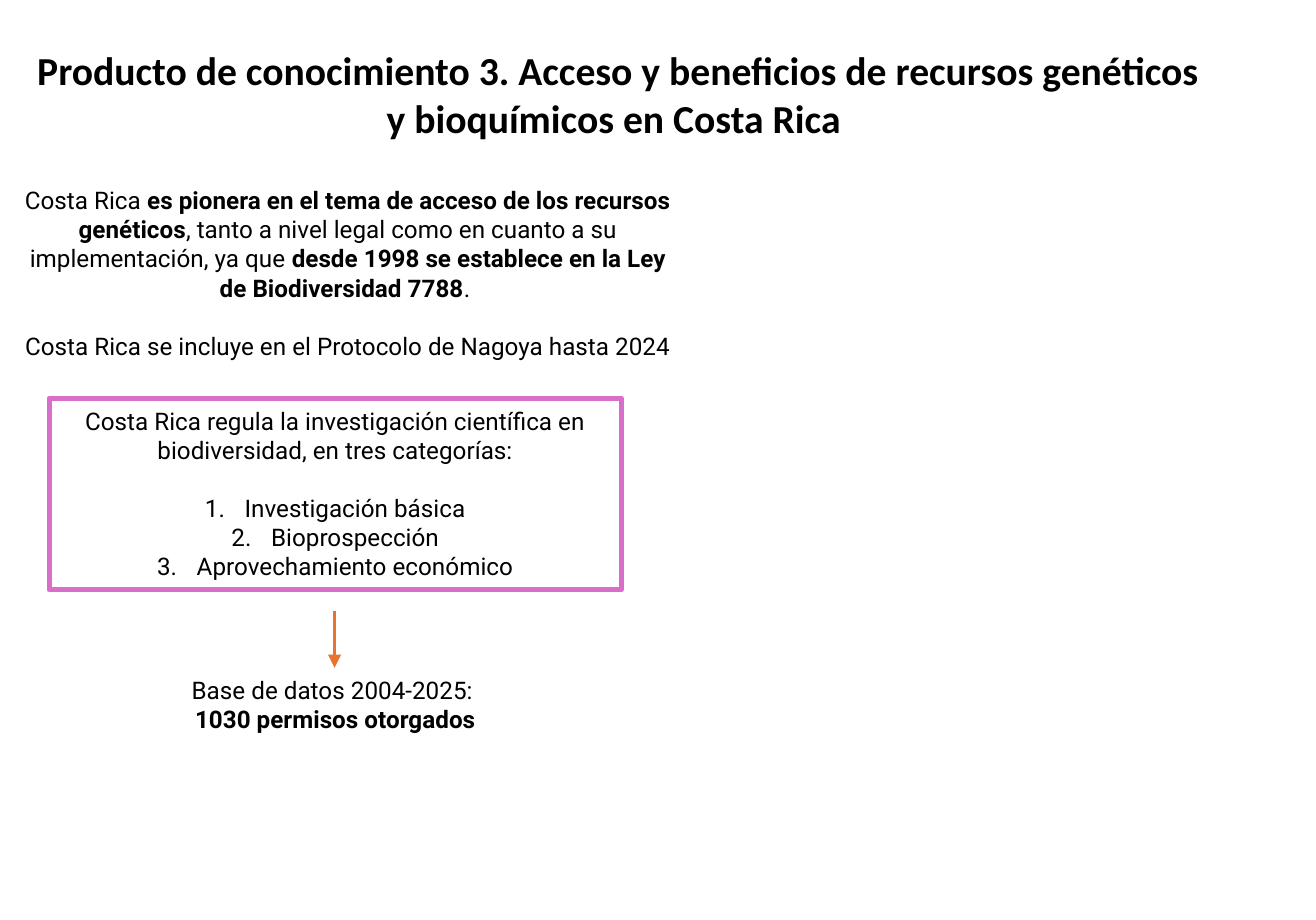
from lxml import etree
from pptx import Presentation, util as u
from pptx.dml.color import RGBColor
from pptx.enum import shapes, text
from pptx.oxml.ns import qn

COLORS = {"ink": "000000", "frame": "D86ECC", "arrow": "E97132"}


def color(name):
    return RGBColor.from_string(COLORS[name])


def write(para, parts, font="Roboto", size=11, bold=False, before=0):
    """Write text, or (text, bold) parts, into a centred paragraph."""
    para.alignment = text.PP_ALIGN.CENTER
    para.space_before = u.Pt(before)
    if isinstance(parts, str):
        parts = [(parts, bold)]
    for words, heavy in parts:
        run = para.add_run()
        run.text = words
        run.font.name = font
        run.font.size = u.Pt(size)
        run.font.bold = heavy
        run.font.color.rgb = color("ink")


class Page:
    gap = 13.2  # height of one text line, in points

    def __init__(self, deck):
        self.slide = deck.slides.add_slide(deck.slide_layouts[1])

    def place(self, shape, x, y, w, h):
        shape.left, shape.top = u.Inches(x), u.Inches(y)
        shape.width, shape.height = u.Inches(w), u.Inches(h)
        frame = shape.text_frame
        frame.word_wrap = True
        frame.auto_size = text.MSO_AUTO_SIZE.NONE
        frame.vertical_anchor = text.MSO_ANCHOR.TOP
        return frame

    def title(self, words, *area):
        frame = self.place(self.slide.shapes.title, *area)
        write(frame.paragraphs[0], words, font="Calibri", size=18, bold=True)

    def note(self, paras, *area, before=0):
        box = self.slide.shapes.add_textbox(0, 0, 0, 0)
        frame = self.place(box, *area)
        for i, parts in enumerate(paras):
            para = frame.add_paragraph() if i else frame.paragraphs[0]
            write(para, parts, before=before if i else 0)

    def steps(self, lead, items, *area):
        body = self.slide.placeholders[1]
        frame = self.place(body, *area)
        body.line.color.rgb = color("frame")
        body.line.width = u.Pt(2.25)
        self.bullet(frame.paragraphs[0], "buNone", 0)
        write(frame.paragraphs[0], lead)
        for i, item in enumerate(items):
            para = frame.add_paragraph()
            self.bullet(para, "buAutoNum", 0.25, type="arabicPeriod")
            write(para, item, before=0 if i else self.gap)

    def bullet(self, para, tag, indent, **attrs):
        props = para._p.get_or_add_pPr()
        props.set("marL", str(u.Inches(indent)))
        props.set("indent", str(-u.Inches(indent)))
        etree.SubElement(props, qn("a:" + tag), **attrs)

    def arrow(self, x, top, end):
        line = self.slide.shapes.add_connector(
            shapes.MSO_CONNECTOR.STRAIGHT,
            u.Inches(x), u.Inches(top), u.Inches(x), u.Inches(end))
        line.line.color.rgb = color("arrow")
        line.line.width = u.Pt(1.5)
        etree.SubElement(line.line._get_or_add_ln(), qn("a:tailEnd"), type="triangle")
        etree.SubElement(line._element.spPr, qn("a:effectLst"))


def main():
    deck = Presentation()
    deck.slide_width, deck.slide_height = u.Inches(8.3), u.Inches(5.8)
    page = Page(deck)

    # Heading
    page.title("Producto de conocimiento 3. Acceso y beneficios de recursos "
               "genéticos y bioquímicos en Costa Rica ", 0.1, 0.24, 7.6, 0.71)

    # Legal background
    page.note([
        [("Costa Rica ", False),
         ("es pionera en el tema de acceso de los recursos genéticos", True),
         (", tanto a nivel legal como en cuanto a su implementación, ya que ", False),
         ("desde 1998 se establece en la Ley de Biodiversidad 7788", True),
         (". ", False)],
        "Costa Rica se incluye en el Protocolo de Nagoya hasta 2024",
    ], 0, 1.12, 4.39, 1.21, before=page.gap)

    # Framed research categories
    page.steps("Costa Rica regula la investigación científica en biodiversidad, "
               "en tres categorías:",
               ["Investigación básica", "Bioprospección", "Aprovechamiento económico"],
               0.31, 2.51, 3.61, 1.21)

    # Resulting permits
    page.arrow(2.11, 3.85, 4.21)
    page.note(["Base de datos 2004-2025: ", [("1030 permisos otorgados", True)]],
              0.97, 4.21, 2.29, 0.47)

    deck.save("out.pptx")


if __name__ == "__main__":
    main()
